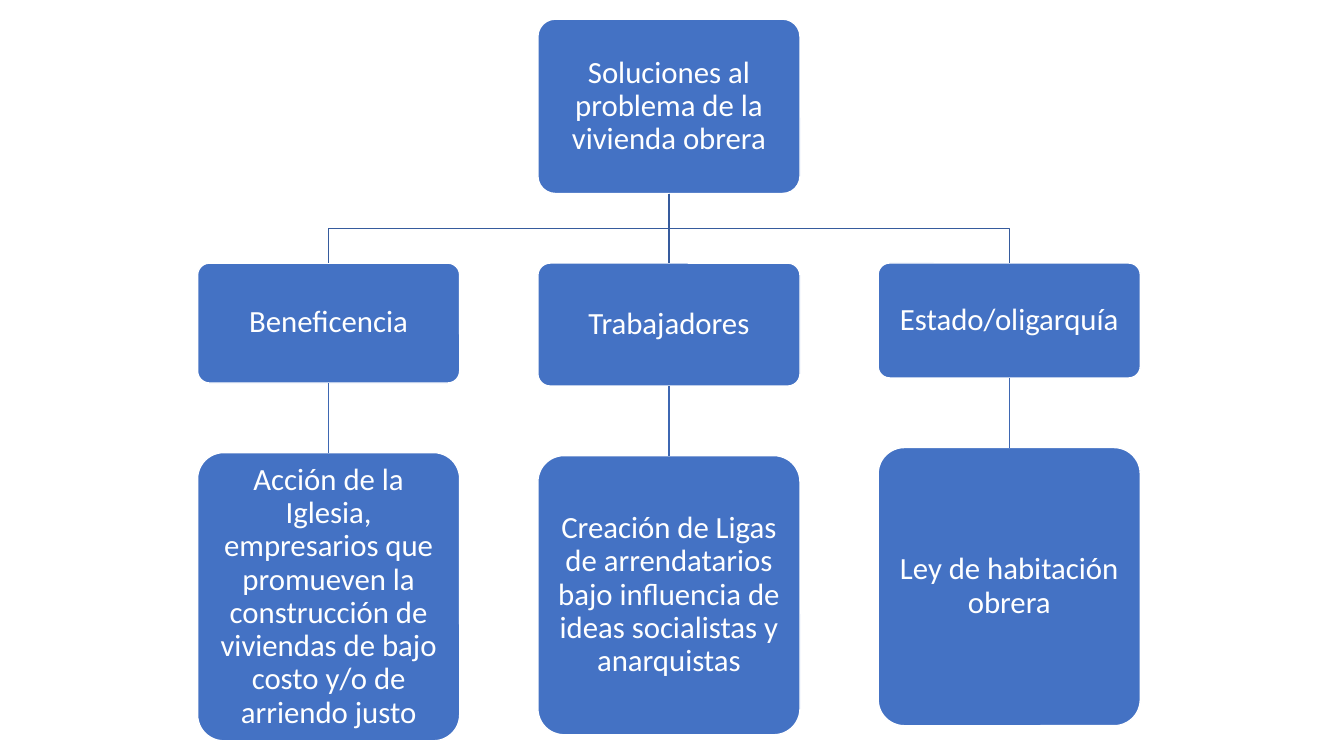
from lxml import etree
from pptx import Presentation
from pptx import util as u
from pptx.dml.color import RGBColor
from pptx.enum import shapes, text
from pptx.oxml.ns import qn

COLORS = {"box": "4472C4", "white": "FFFFFF", "branch": "365B9D", "stem": "3E67B2"}
MARGINS = dict.fromkeys(
    ("margin_left", "margin_top", "margin_right", "margin_bottom"), u.Inches(0.09))
FRAME = {"word_wrap": True, "vertical_anchor": text.MSO_ANCHOR.MIDDLE, **MARGINS}
PARAGRAPH = {"alignment": text.PP_ALIGN.CENTER, "line_spacing": 0.9}
FONT = {"name": "Calibri", "size": u.Pt(22)}

BOX_WIDTH, COLUMN_STEP, LEVEL_GAP = 2.6, 3.375, 0.69
CHART_LEFT, CHART_TOP, ROOT_HEIGHT = 1.96, 0.19, 1.73
ROOT = "Soluciones al problema de la vivienda obrera"
# actor, height of its box, solution, height of its box
COLUMNS = [
    ("Beneficencia", 1.19,
     "Acción de la Iglesia, empresarios que promueven la construcción de "
     "viviendas de bajo costo y/o de arriendo justo", 2.86),
    ("Trabajadores", 1.22,
     "Creación de Ligas de arrendatarios bajo influencia de ideas socialistas "
     "y anarquistas", 2.77),
    ("Estado/oligarquía", 1.14, "Ley de habitación obrera", 2.76),
]


def apply(target, values):
    for name, value in values.items():
        setattr(target, name, value)


def color(name):
    return RGBColor.from_string(COLORS[name])


def style_line(line, name):
    line.color.rgb = color(name)
    line.width = u.Pt(1)


def add_box(slide, left, top, height, words):
    box = slide.shapes.add_shape(
        shapes.MSO_SHAPE.ROUNDED_RECTANGLE,
        *map(u.Inches, (left, top, BOX_WIDTH, height)))
    box.adjustments[0] = 0.1
    box.shadow.inherit = False
    box.fill.solid()
    box.fill.fore_color.rgb = color("box")
    style_line(box.line, "white")
    apply(box.text_frame, FRAME)
    paragraph = box.text_frame.paragraphs[0]
    apply(paragraph, PARAGRAPH)
    run = paragraph.add_run()
    run.text = words
    apply(run.font, FONT)
    run.font.color.rgb = color("white")
    return box


def add_straight_link(slide, upper, lower, line_color):
    link = slide.shapes.add_connector(shapes.MSO_CONNECTOR.STRAIGHT, 0, 0, 0, 0)
    link.begin_connect(upper, 2)
    link.end_connect(lower, 0)
    style_line(link.line, line_color)
    etree.SubElement(link._element.spPr, qn("a:effectLst"))


def add_bent_link(slide, upper, lower):
    """Goes down from upper, across at half the gap, and down to lower."""
    start_x, end_x = (box.left + box.width // 2 for box in (upper, lower))
    start_y, end_y = upper.top + upper.height, lower.top
    middle_y = (start_y + end_y) // 2
    builder = slide.shapes.build_freeform(start_x, start_y)
    builder.add_line_segments(
        [(start_x, middle_y), (end_x, middle_y), (end_x, end_y)], close=False)
    link = builder.convert_to_shape()
    link.shadow.inherit = False
    link.fill.background()
    style_line(link.line, "branch")


def add_column(slide, root, left, top, column):
    """Places an actor above its solution and links both to the root."""
    actor_words, actor_height, solution_words, solution_height = column
    actor = add_box(slide, left, top, actor_height, actor_words)
    solution = add_box(slide, left, top + actor_height + LEVEL_GAP,
                       solution_height, solution_words)
    if actor.left == root.left:
        add_straight_link(slide, root, actor, "branch")
    else:
        add_bent_link(slide, root, actor)
    add_straight_link(slide, actor, solution, "stem")


def add_hierarchy(slide, left, top):
    middle = len(COLUMNS) // 2
    root = add_box(slide, left + middle * COLUMN_STEP, top, ROOT_HEIGHT, ROOT)
    for index, column in enumerate(COLUMNS):
        add_column(slide, root, left + index * COLUMN_STEP,
                   top + ROOT_HEIGHT + LEVEL_GAP, column)


def main():
    deck = Presentation()
    deck.slide_width, deck.slide_height = u.Inches(13.33), u.Inches(7.5)
    slide = deck.slides.add_slide(deck.slide_layouts[6])
    add_hierarchy(slide, CHART_LEFT, CHART_TOP)
    deck.save("out.pptx")


if __name__ == "__main__":
    main()
